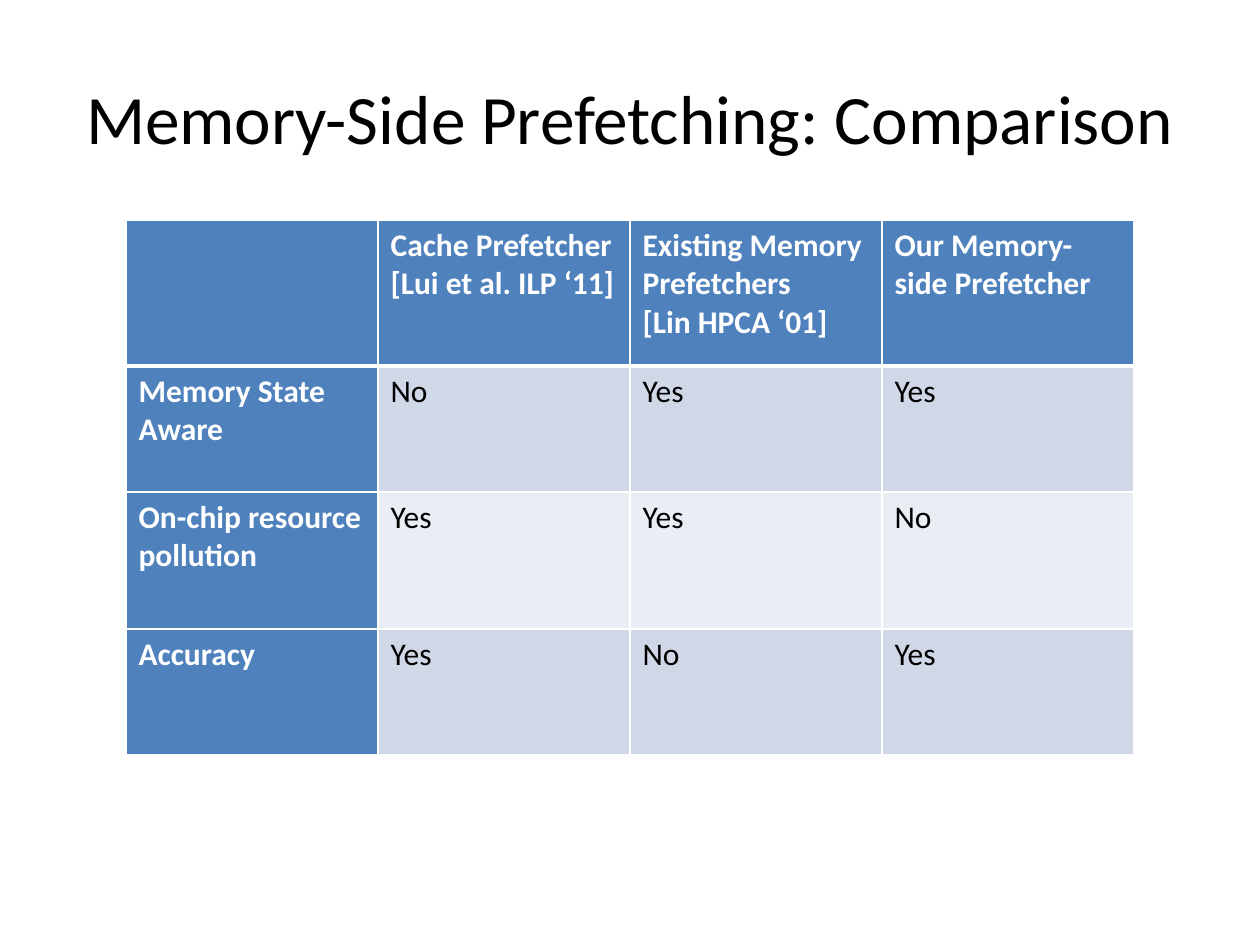
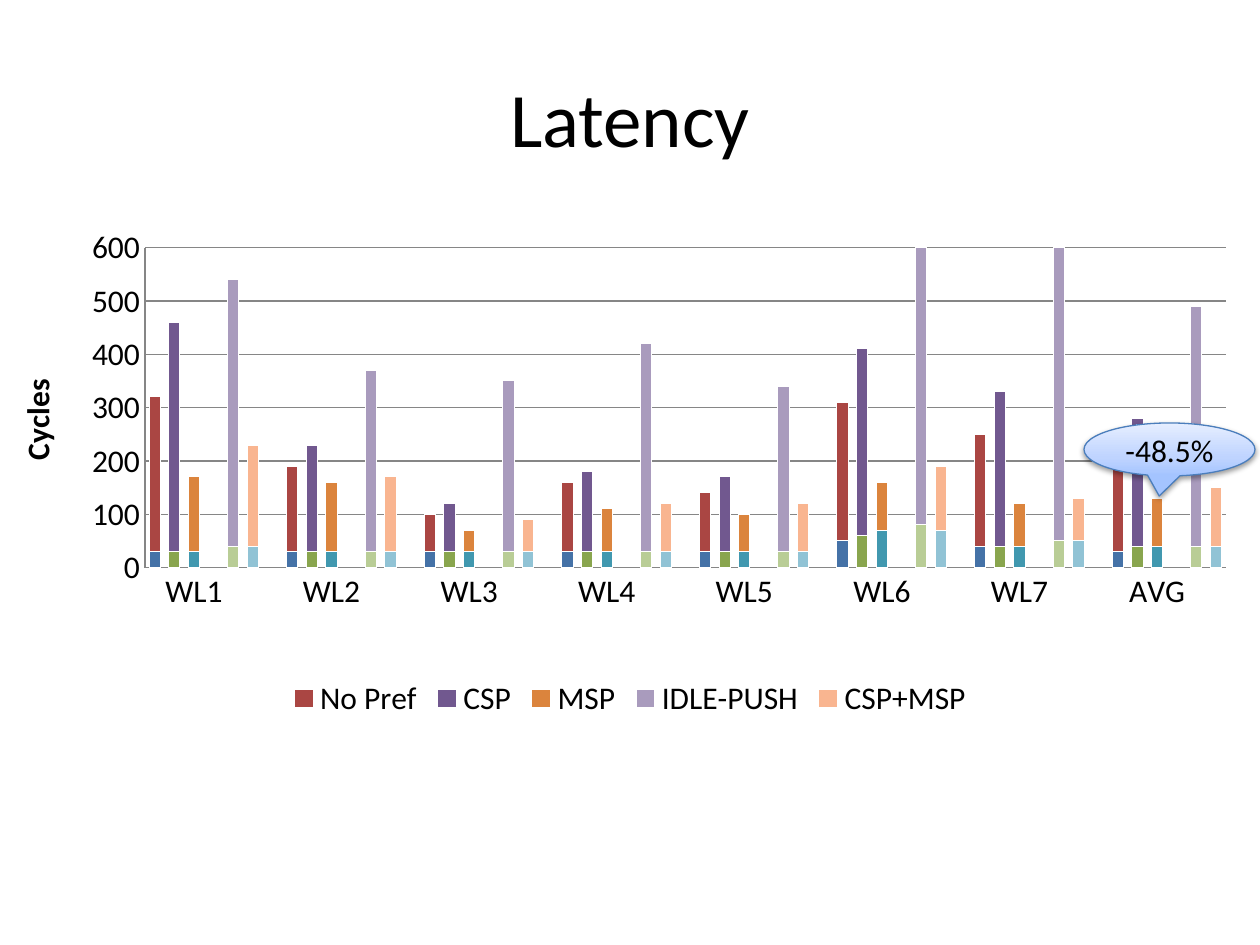
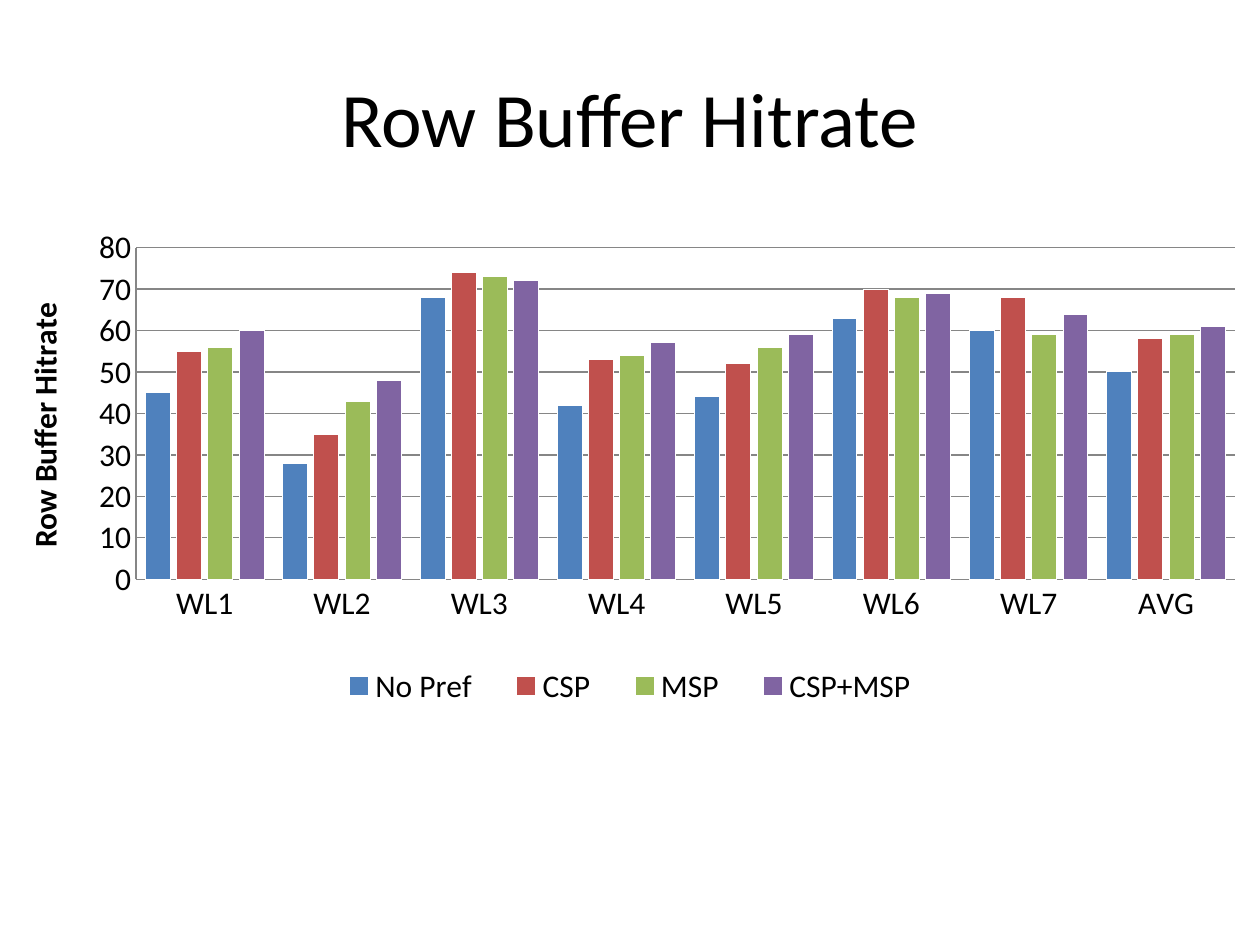
from copy import deepcopy
from lxml.etree import SubElement
from pptx import Presentation
from pptx.chart.data import CategoryChartData as ChartData
from pptx.dml.color import RGBColor
from pptx.enum.chart import XL_CHART_TYPE as Kind, XL_LEGEND_POSITION as Side, XL_TICK_MARK as Tick
from pptx.enum.shapes import MSO_SHAPE as Shape
from pptx.enum.text import MSO_ANCHOR as Anchor, PP_ALIGN as Align
from pptx.oxml import parse_xml
from pptx.oxml.ns import nsdecls, qn
from pptx.util import Pt

FONT = "Calibri"
BLACK, WHITE, BLUE, GRID = "000000", "FFFFFF", "4F81BD", "868686"
BANDS = ["D0D8E8", "E9EDF4"]
TITLE_BOX = (63, 38, 1134, 158)
CHART_BOX = (0, 220, 1260, 504)

TABLE_BOX = (126, 220, 1008, 535)
HEIGHTS = [146, 126, 137, 126]
ROWS = [
    ["", "Cache Prefetcher\n[Lui et al. ILP ‘11]",
     "Existing Memory Prefetchers\n[Lin HPCA ‘01]", "Our Memory-side Prefetcher"],
    ["Memory State Aware", "No", "Yes", "Yes"],
    ["On-chip resource pollution", "Yes", "Yes", "No"],
    ["Accuracy", "Yes", "No", "Yes"],
]

LOADS = ["WL1", "WL2", "WL3", "WL4", "WL5", "WL6", "WL7", "AVG"]
# slot in the group, then (name, colour, values) for the lower and upper part
STACKS = [
    (0, ("Series 1", "4572A7", [30, 30, 30, 30, 30, 50, 40, 30]),
        ("No Pref", "AA4643", [290, 160, 70, 130, 110, 260, 210, 170])),
    (1, ("Series 3", "89A54E", [30, 30, 30, 30, 30, 60, 40, 40]),
        ("CSP", "71588F", [430, 200, 90, 150, 140, 350, 290, 240])),
    (2, ("Series 5", "4198AF", [30, 30, 30, 30, 30, 70, 40, 40]),
        ("MSP", "DB843D", [140, 130, 40, 80, 70, 90, 80, 90])),
    (4, ("Series 7", "B9CD96", [40, 30, 30, 30, 30, 80, 50, 40]),
        ("IDLE-PUSH", "A99BBD", [500, 340, 320, 390, 310, 670, 630, 450])),
    (5, ("Series 9", "91C3D5", [40, 30, 30, 30, 30, 70, 50, 40]),
        ("CSP+MSP", "F9B590", [190, 140, 60, 90, 90, 120, 80, 110])),
]
STEP, LABEL_SLOT = 7, 2
HITS = [
    ("No Pref", BLUE, [45, 28, 68, 42, 44, 63, 60, 50]),
    ("CSP", "C0504D", [55, 35, 74, 53, 52, 70, 68, 58]),
    ("MSP", "9BBB59", [56, 43, 73, 54, 56, 68, 59, 59]),
    ("CSP+MSP", "8064A2", [60, 48, 72, 57, 59, 69, 64, 61]),
]
CALLOUT_BOX = (1084, 423, 171, 53)
CALLOUT_STOPS = [(0, "A4C4FF"), (0.35, "BFD4FF"), (1, "E6EEFF")]


def px(n):
    return round(n * 914400 / 126)


def rgb(code):
    return RGBColor.from_string(code)


def style(font, size=18, color=BLACK, bold=False):
    font.name, font.size, font.bold = FONT, Pt(size), bold
    font.color.rgb = rgb(color)


def write(frame, text, align=None, **look):
    frame.text = text
    for para in frame.paragraphs:
        para.alignment = align
        style(para.font, **look)
        for run in para.runs:
            style(run.font, **look)


def start(deck, title, size=44):
    """Add a blank slide with the shared title."""
    slide = deck.slides.add_slide(deck.slide_layouts[6])
    frame = slide.shapes.add_textbox(*map(px, TITLE_BOX)).text_frame
    frame.word_wrap, frame.vertical_anchor = True, Anchor.MIDDLE
    write(frame, title, Align.CENTER, size=size)
    return slide


def border(cell, top, bottom):
    props = cell._tc.get_or_add_tcPr()
    for i, (side, width) in enumerate(zip("LRTB", (1, 1, top, bottom))):
        props.insert(i, parse_xml(
            f'<a:ln{side} {nsdecls("a")} w="{Pt(width)}"><a:solidFill>'
            f'<a:srgbClr val="{WHITE}"/></a:solidFill></a:ln{side}>'))


def add_grid(slide):
    table = slide.shapes.add_table(len(ROWS), len(ROWS[0]), *map(px, TABLE_BOX)).table
    for r, (row, height) in enumerate(zip(ROWS, HEIGHTS)):
        table.rows[r].height = px(height)
        for c, text in enumerate(row):
            cell = table.cell(r, c)
            head = r == 0 or c == 0
            cell.fill.solid()
            cell.fill.fore_color.rgb = rgb(BLUE if head else BANDS[(r - 1) % 2])
            write(cell.text_frame, text, color=WHITE if head else BLACK, bold=head)
            border(cell, 3 if r == 1 else 1, 3 if r == 0 else 1)


def place(part, box, at, inner=False):
    """Give a plot area or legend a fixed place in its chart."""
    for old in part.findall(qn("c:layout")):
        part.remove(old)
    layout = parse_xml(f'<c:layout {nsdecls("c")}><c:manualLayout/></c:layout>')
    pairs = [("layoutTarget", "inner")] if inner else []
    pairs += [("xMode", "edge"), ("yMode", "edge"), *zip("xywh", box)]
    for tag, val in pairs:
        SubElement(layout[0], qn(f"c:{tag}")).set("val", str(val))
    part.insert(at, layout)


def add_bars(slide, kind, cats, series, title, top, unit, overlap, plot, key=None, hide=()):
    data = ChartData()
    data.categories = cats
    for name, _, vals in series:
        data.add_series(name, vals)
    chart = slide.shapes.add_chart(kind, *map(px, CHART_BOX), data).chart
    chart.has_title = False
    style(chart.font)

    bars = chart.plots[0]
    bars.gap_width, bars.overlap, bars.vary_by_categories = 75, overlap, False
    for item, (_, color, _) in zip(bars.series, series):
        item.format.fill.solid()
        item.format.fill.fore_color.rgb = rgb(color)
        item.format.line.color.rgb = rgb(WHITE)
        item.invert_if_negative = False

    across, up = chart.category_axis, chart.value_axis
    up.minimum_scale, up.maximum_scale, up.major_unit = 0, top, unit
    up.has_major_gridlines = True
    for axis in (across, up):
        axis.major_tick_mark = axis.minor_tick_mark = Tick.NONE
        style(axis.tick_labels.font)
    for line in (across.format.line, up.format.line, up.major_gridlines.format.line):
        line.color.rgb, line.width = rgb(GRID), Pt(0.75)
    frame = up.axis_title.text_frame
    write(frame, title, bold=True)
    frame._txBody.bodyPr.set("rot", "-5400000")
    frame._txBody.bodyPr.set("vert", "horz")

    chart.has_legend = True
    legend = chart.legend
    legend.position, legend.include_in_layout = Side.BOTTOM, True
    style(legend.font)
    for n, idx in enumerate(hide):
        legend._element.insert(n + 1, parse_xml(
            f'<c:legendEntry {nsdecls("c")}><c:idx val="{idx}"/>'
            '<c:delete val="1"/></c:legendEntry>'))
    if key:
        place(legend._element, key, 1 + len(hide))
    place(chart._chartSpace.chart.plotArea, plot, 0, inner=True)


def spread(slot, vals):
    """Put one value in the given slot of each group."""
    out = [None] * (STEP * len(LOADS) - 1)
    out[slot::STEP] = vals
    return out


def add_callout(slide, text):
    shape = slide.shapes.add_shape(Shape.OVAL_CALLOUT, *map(px, CALLOUT_BOX))
    shape.adjustments[0], shape.adjustments[1] = -0.06, 0.88
    fill = shape.fill
    fill.gradient()
    fill.gradient_angle = 90
    stops = shape._element.spPr.find(".//" + qn("a:gsLst"))
    stops.append(deepcopy(stops[0]))
    for stop, (pos, color) in zip(fill.gradient_stops, CALLOUT_STOPS):
        stop.position, stop.color.rgb = pos, rgb(color)
    shape.line.color.rgb, shape.line.width = rgb("4B7EBC"), Pt(0.75)
    shape.shadow.inherit = False
    shape._element.spPr.find(qn("a:effectLst")).append(parse_xml(
        f'<a:outerShdw {nsdecls("a")} blurRad="40000" dist="20000" dir="5400000" rotWithShape="0">'
        f'<a:srgbClr val="{BLACK}"><a:alpha val="38000"/></a:srgbClr></a:outerShdw>'))
    frame = shape.text_frame
    frame.vertical_anchor, frame.word_wrap = Anchor.MIDDLE, True
    write(frame, text, Align.CENTER)


def main():
    deck = Presentation()
    deck.slide_width, deck.slide_height = px(1260), px(945)

    add_grid(start(deck, "Memory-Side Prefetching: Comparison", 39.6))

    slide = start(deck, "Latency")
    cats = [label or "" for label in spread(LABEL_SLOT, LOADS)]
    series = [(name, color, spread(slot, vals))
              for slot, *parts in STACKS for name, color, vals in parts]
    add_bars(slide, Kind.COLUMN_STACKED, cats, series, "Cycles", 600, 100, 100,
             (0.115, 0.055, 0.858, 0.635), hide=range(0, len(series), 2))
    add_callout(slide, "-48.5%")

    slide = start(deck, "Row Buffer Hitrate")
    add_bars(slide, Kind.COLUMN_CLUSTERED, LOADS, HITS, "Row Buffer Hitrate", 80, 10, -25,
             (0.108, 0.055, 0.872, 0.658), key=(0.25, 0.87, 0.5, 0.11))

    deck.save("out.pptx")


if __name__ == "__main__":
    main()
